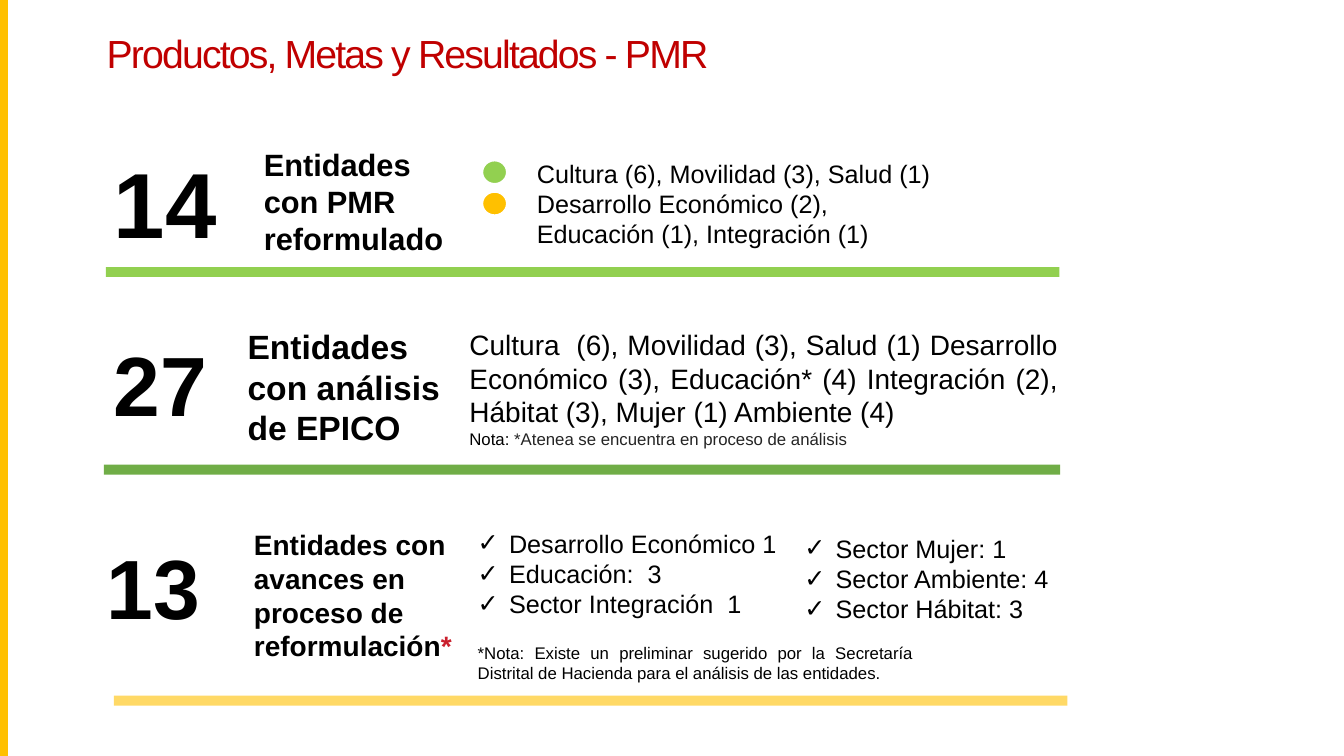
from lxml.etree import SubElement
from pptx import Presentation
from pptx.dml.color import RGBColor
from pptx.enum.shapes import MSO_SHAPE
from pptx.enum.text import PP_ALIGN
from pptx.oxml.ns import qn
from pptx.util import Cm, Pt

BLACK = RGBColor(0x00, 0x00, 0x00)
WHITE = RGBColor(0xFF, 0xFF, 0xFF)
RED = RGBColor(0xC0, 0x00, 0x00)
STAR_RED = RGBColor(0xCA, 0x20, 0x2E)
GRAY = RGBColor(0x24, 0x24, 0x24)
LIME = RGBColor(0x92, 0xD0, 0x50)
GREEN = RGBColor(0x70, 0xAD, 0x47)
AMBER = RGBColor(0xFF, 0xC0, 0x00)
PALE_AMBER = RGBColor(0xFF, 0xD9, 0x66)


def add_box(s, x, y, w, h):
    tf = s.shapes.add_textbox(Cm(x), Cm(y), Cm(w), Cm(h)).text_frame
    tf.word_wrap = True
    return tf


def add_par(tf, align=PP_ALIGN.LEFT):
    first = tf.paragraphs[0]
    p = tf.add_paragraph() if first.runs else first
    p.alignment = align
    return p


def add_run(p, text, size, color=BLACK, bold=False):
    r = p.add_run()
    r.text = text
    r.font.name = "Arial"
    r.font.size = Pt(size)
    r.font.bold = bold
    r.font.color.rgb = color
    return r


def add_bold(s, x, y, w, h, text, size):
    p = add_par(add_box(s, x, y, w, h))
    add_run(p, text, size, bold=True)
    return p


def add_checks(tf, items):
    for item in items:
        p = add_par(tf, PP_ALIGN.JUSTIFY)
        pPr = p._p.get_or_add_pPr()
        pPr.set("marL", str(Cm(0.79)))
        pPr.set("indent", str(Cm(-0.79)))
        SubElement(pPr, qn("a:buFont"), typeface="Arial")
        SubElement(pPr, qn("a:buChar"), char="✓")
        add_run(p, item, 18)


def add_block(s, kind, x, y, w, h, color):
    sp = s.shapes.add_shape(kind, Cm(x), Cm(y), Cm(w), Cm(h))
    sp.shadow.inherit = False
    sp.fill.solid()
    sp.fill.fore_color.rgb = color
    sp.line.fill.background()
    return sp


def add_dot(s, y, color):
    sp = add_block(s, MSO_SHAPE.OVAL, 12.12, y, 0.69, 0.66, color)
    sp.line.color.rgb = WHITE
    sp.line.width = Pt(3.25)


def add_title(s, text):
    p = add_par(add_box(s, 2.44, 0.38, 26.72, 1.55))
    p.line_spacing = 1.2
    r = add_run(p, text, 28, RED)
    r.font._element.set("spc", "-130")


def add_reformulated(s):
    add_bold(s, 2.62, 3.56, 3.68, 3.07, "14", 66)
    add_bold(s, 6.4, 3.56, 5.46, 3.07, "Entidades con PMR reformulado", 22)
    add_dot(s, 4.01, LIME)
    add_dot(s, 4.8, AMBER)
    tf = add_box(s, 13.28, 3.86, 11.94, 2.57)
    add_run(add_par(tf), "Cultura (6), Movilidad (3), Salud (1)", 18)
    p = add_par(tf)
    add_run(p, "Desarrollo Económico (2),", 18)
    p.add_line_break()
    add_run(p, "Educación (1), Integración (1)", 18)
    add_block(s, MSO_SHAPE.RECTANGLE, 2.67, 6.73, 24.03, 0.25, LIME)


def add_analysed(s):
    add_bold(s, 2.62, 8.25, 3.1, 2.82, "27", 60)
    add_bold(s, 5.99, 8.1, 5.99, 3.33, "Entidades con análisis de EPICO", 24)
    tf = add_box(s, 11.58, 8.13, 15.34, 4.19)
    add_run(add_par(tf, PP_ALIGN.JUSTIFY),
            "Cultura\u00a0 (6), Movilidad (3), Salud (1) Desarrollo Económico (3), "
            "Educación* (4) Integración (2), Hábitat (3), Mujer (1) Ambiente (4)", 20)
    p = add_par(tf, PP_ALIGN.JUSTIFY)
    add_run(p, "Nota: ", 12)
    add_run(p, "*Atenea se encuentra en proceso de análisis", 12, GRAY)
    add_block(s, MSO_SHAPE.RECTANGLE, 2.62, 11.71, 24.1, 0.25, GREEN)


def add_in_progress(s):
    add_bold(s, 2.44, 13.36, 3.35, 2.82, "13", 60)
    p = add_bold(s, 6.15, 13.18, 7.24, 3.68,
                 "Entidades con avances en proceso de reformulación", 20)
    add_run(p, "*", 20, STAR_RED, True)
    tf = add_box(s, 11.79, 13.18, 11.48, 6.25)
    add_checks(tf, ["Desarrollo Económico 1", "Educación:\u00a0 3", "Sector Integración\u00a0 1"])
    p = add_par(tf, PP_ALIGN.JUSTIFY)
    p.space_before = Pt(16.8)
    add_run(p, "*Nota: Existe un preliminar sugerido por la Secretaría "
               "Distrital de Hacienda para el análisis de las entidades.", 12)
    tf = add_box(s, 20.02, 13.31, 10.62, 2.57)
    add_checks(tf, ["Sector Mujer: 1", "Sector Ambiente: 4", "Sector Hábitat: 3"])
    add_block(s, MSO_SHAPE.RECTANGLE, 2.87, 17.53, 24.03, 0.25, PALE_AMBER)


def main():
    prs = Presentation()
    prs.slide_width = Cm(33.87)
    prs.slide_height = Cm(19.05)
    s = prs.slides.add_slide(prs.slide_layouts[6])
    add_block(s, MSO_SHAPE.RECTANGLE, 0, 0, 0.2, 19.05, AMBER)
    add_title(s, "Productos, Metas y Resultados - PMR")
    add_reformulated(s)
    add_analysed(s)
    add_in_progress(s)
    prs.save("out.pptx")


if __name__ == "__main__":
    main()
